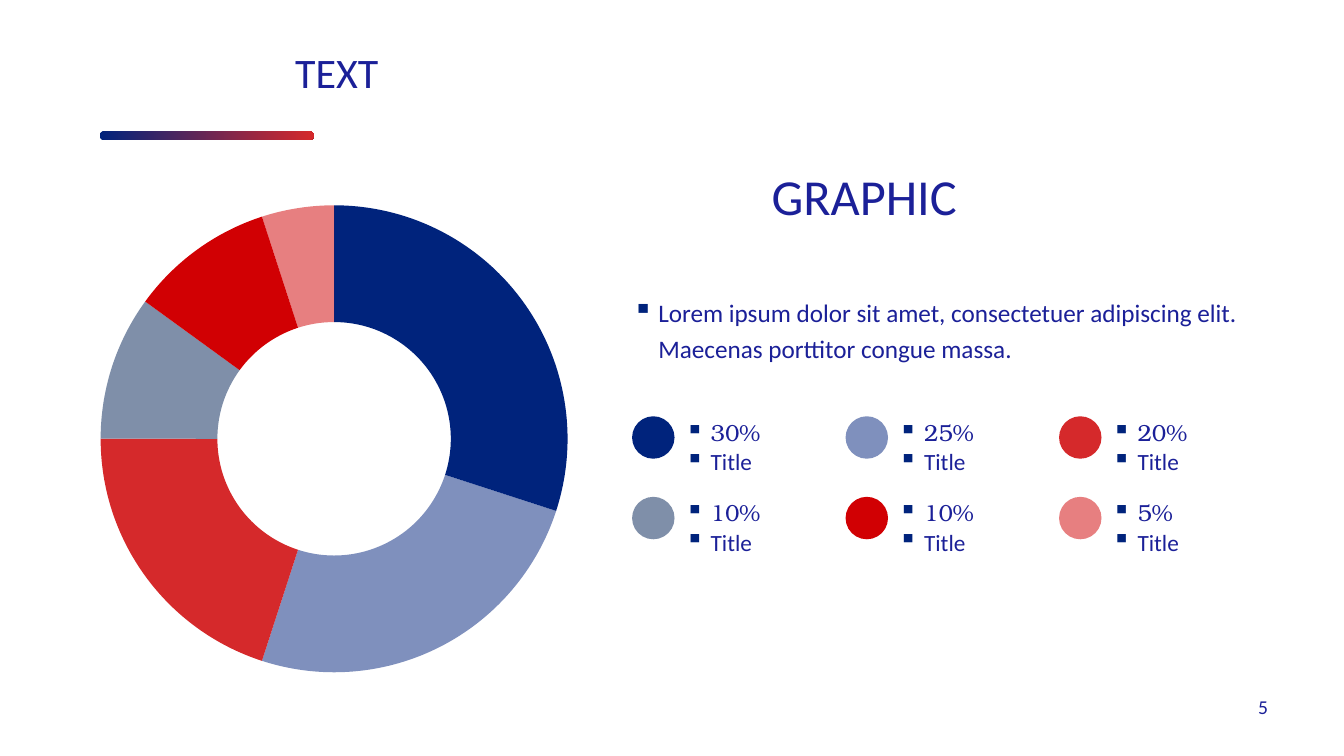
from dataclasses import dataclass

import pptx
import pptx.chart.data
import pptx.dml.color
import pptx.enum.chart
import pptx.enum.shapes
import pptx.enum.text
import pptx.oxml
import pptx.oxml.ns
import pptx.util
from lxml import etree
from pptx.util import Cm

ALIGN = pptx.enum.text.PP_ALIGN
ANCHOR = pptx.enum.text.MSO_ANCHOR
SHAPE = pptx.enum.shapes.MSO_SHAPE


@dataclass(frozen=True)
class Theme:
    sans: str = "Calibri"
    serif: str = "TeX Gyre Bonum"
    ink: str = "1B2098"
    navy: str = "00237C"
    red: str = "D5292B"
    slate: str = "7F8FA9"
    crimson: str = "D10003"
    black: str = "000000"
    headline: float = 36
    heading: float = 30
    body: float = 18
    legend: float = 16.6
    page: float = 14
    chart: float = 10


THEME = Theme()

# Share in percent, colour, opacity in percent
SHARES = [
    (30, THEME.navy, 100),
    (25, THEME.navy, 50),
    (20, THEME.red, 100),
    (10, THEME.slate, 100),
    (10, THEME.crimson, 100),
    (5, THEME.crimson, 50),
]


def rgb(colour):
    return pptx.dml.color.RGBColor.from_string(colour)


def paint(fill, colour, opacity=100):
    fill.solid()
    fill.fore_color.rgb = rgb(colour)
    if opacity < 100:
        for swatch in fill._xPr.iter(pptx.oxml.ns.qn("a:srgbClr")):
            etree.SubElement(swatch, pptx.oxml.ns.qn("a:alpha"), val=str(opacity * 1000))


def add_bullet(paragraph):
    """Give the paragraph a hanging square bullet."""
    properties = paragraph._p.get_or_add_pPr()
    indent = Cm(0.64)
    properties.set("marL", str(indent))
    properties.set("indent", str(-indent))
    namespace = pptx.oxml.ns.nsdecls("a")
    for markup in (
        f'<a:buClr {namespace}><a:srgbClr val="{THEME.navy}"/></a:buClr>',
        f'<a:buSzPct {namespace} val="110000"/>',
        f'<a:buChar {namespace} char="▪"/>',
    ):
        properties.append(pptx.oxml.parse_xml(markup))


def add_text(slide, text, left, top, width, height, size, font=THEME.sans,
             align=ALIGN.LEFT, anchor=ANCHOR.TOP, spacing=1.0, inset=None, bullet=False):
    frame = slide.shapes.add_textbox(left, top, width, height).text_frame
    frame.word_wrap = True
    frame.vertical_anchor = anchor
    if inset is not None:
        frame.margin_left = frame.margin_right = inset
        frame.margin_top = frame.margin_bottom = inset
    paragraph = frame.paragraphs[0]
    if bullet:
        add_bullet(paragraph)
    paragraph.alignment = align
    paragraph.line_spacing = spacing
    run = paragraph.add_run()
    run.text = text
    run.font.name = font
    run.font.size = pptx.util.Pt(size)
    run.font.color.rgb = rgb(THEME.ink)


def add_heading(slide, text, left, top, width, height, size, spacing):
    add_text(slide, text, left, top, width, height, size, align=ALIGN.CENTER,
             anchor=ANCHOR.MIDDLE, spacing=spacing, inset=Cm(0.64))


def add_plain_shape(slide, kind, left, top, width, height):
    shape = slide.shapes.add_shape(kind, left, top, width, height)
    shape.shadow.inherit = False
    shape.line.fill.background()
    return shape


def add_accent_bar(slide):
    bar = add_plain_shape(slide, SHAPE.ROUNDED_RECTANGLE, Cm(2.51), Cm(3.3), Cm(5.4), Cm(0.24))
    bar.adjustments[0] = 0.5
    bar.fill.gradient()
    bar.fill.gradient_angle = 0
    for stop, colour in zip(bar.fill.gradient_stops, (THEME.navy, THEME.red)):
        stop.color.rgb = rgb(colour)


def set_plot_area(chart, **fractions):
    """Place the plot by fractions x, y, w and h of the chart frame."""
    plot_area = chart._chartSpace.chart.plotArea
    for layout in plot_area.findall(pptx.oxml.ns.qn("c:layout")):
        plot_area.remove(layout)
    modes = '<c:xMode val="edge"/><c:yMode val="edge"/>'
    sizes = "".join(f'<c:{side} val="{value}"/>' for side, value in fractions.items())
    plot_area.insert(0, pptx.oxml.parse_xml(
        f'<c:layout {pptx.oxml.ns.nsdecls("c")}><c:manualLayout>'
        f'<c:layoutTarget val="inner"/>{modes}{sizes}</c:manualLayout></c:layout>'))


def add_doughnut(slide):
    shares = pptx.chart.data.CategoryChartData()
    shares.categories = [str(number) for number in range(1, len(SHARES) + 1)]
    shares.add_series("Series 1", [share for share, _, _ in SHARES])
    chart = slide.shapes.add_chart(
        pptx.enum.chart.XL_CHART_TYPE.DOUGHNUT,
        Cm(2.16), Cm(4.62), Cm(12.52), Cm(12.75), shares).chart
    chart.has_title = False
    chart.has_legend = False
    chart.font.name = THEME.serif
    chart.font.size = pptx.util.Pt(THEME.chart)
    chart.font.color.rgb = rgb(THEME.black)
    set_plot_area(chart, x=0.03, y=0.04, w=0.94, h=0.93)
    doughnut = chart.plots[0]
    doughnut.vary_by_categories = False
    for hole in doughnut._element.iter(pptx.oxml.ns.qn("c:holeSize")):
        hole.set("val", "52")
    for index, (_, colour, opacity) in enumerate(SHARES):
        ring_part = doughnut.series[0].points[index].format
        paint(ring_part.fill, colour, opacity)
        ring_part.line.fill.background()


def add_legend(slide, columns=3):
    for index, (share, colour, opacity) in enumerate(SHARES):
        row, column = divmod(index, columns)
        left = Cm(15.93) + column * Cm(5.38)
        top = Cm(10.49) + row * Cm(2.03)
        dot = add_plain_shape(slide, SHAPE.OVAL, left, top, Cm(1.07), Cm(1.07))
        paint(dot.fill, colour, opacity)
        label_top = top - Cm(0.15)
        for label, font in ((f"{share}%", THEME.serif), ("Title", THEME.sans)):
            add_text(slide, label, left + Cm(1.09), label_top, Cm(4.45), Cm(1.02),
                     THEME.legend, font, spacing=1.1, bullet=True)
            label_top += Cm(0.74)


def main():
    deck = pptx.Presentation()
    deck.slide_width, deck.slide_height = Cm(33.87), Cm(19.05)
    slide = deck.slides.add_slide(deck.slide_layouts[6])

    add_accent_bar(slide)
    add_heading(slide, "GRAPHIC", Cm(15.67), Cm(4.09), Cm(12.22), Cm(1.88), THEME.headline, 0.85)
    add_text(slide,
             "Lorem ipsum dolor sit amet, consectetuer adipiscing elit. "
             "Maecenas porttitor congue massa.",
             Cm(15.7), Cm(7.21), Cm(17.88), Cm(2.31), THEME.body, spacing=1.2, bullet=True)
    add_doughnut(slide)
    add_legend(slide)
    add_heading(slide, "TEXT", Cm(2.24), Cm(0.89), Cm(12.5), Cm(2.18), THEME.heading, 0.65)
    add_text(slide, "5", Cm(29.67), Cm(17.35), Cm(2.54), Cm(0.89), THEME.page,
             align=ALIGN.RIGHT, anchor=ANCHOR.MIDDLE)
    deck.save("out.pptx")


if __name__ == "__main__":
    main()
